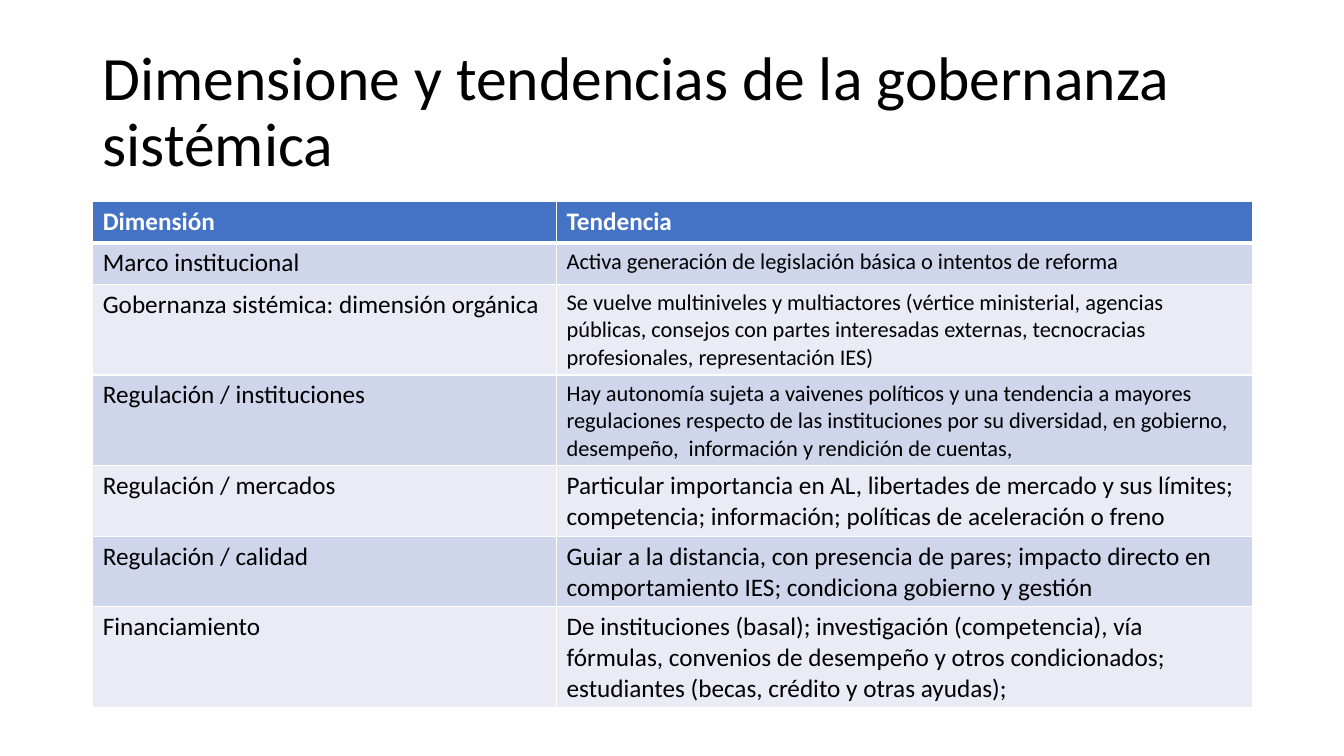
"""Build a slide with a table of dimensions and trends in systemic governance."""
import pptx
import pptx.dml.color
import pptx.enum.text
import pptx.oxml
import pptx.oxml.ns
import pptx.util

PX = 9144
THEME = {
    "font": "Calibri",
    "title_size": 44,
    "body_size": 18,
    "detail_size": 16,
    "text": "000000",
    "header_text": "FFFFFF",
    "header_fill": "4472C4",
    "bands": ["CFD5EA", "E9EBF5"],
    "border": "FFFFFF",
}
MARGIN, CONTENT_WIDTH = 92, 1150
ROW_HEIGHT = 41
COLUMN_WIDTHS = [460, 690]


def write(frame, text, size=THEME["body_size"], color=THEME["text"], bold=False, spacing=None):
    paragraph = frame.paragraphs[0]
    paragraph.line_spacing = spacing
    run = paragraph.add_run()
    run.text = text
    run.font.name = THEME["font"]
    run.font.size = pptx.util.Pt(size)
    run.font.bold = bold
    run.font.color.rgb = pptx.dml.color.RGBColor.from_string(color)


def add_borders(cell, top, bottom):
    properties = cell._tc.get_or_add_tcPr()
    widths = {"lnL": 1, "lnR": 1, "lnT": top, "lnB": bottom}
    for position, (side, points) in enumerate(widths.items()):
        line = pptx.oxml.parse_xml(
            f'<a:{side} {pptx.oxml.ns.nsdecls("a")} w="{pptx.util.Pt(points)}">'
            f'<a:solidFill><a:srgbClr val="{THEME["border"]}"/></a:solidFill></a:{side}>'
        )
        properties.insert(position, line)


big, small = THEME["body_size"], THEME["detail_size"]
governance = [
    ("Dimensión", "Tendencia", big),
    ("Marco institucional", "Activa generación de legislación básica o intentos de reforma", small),
    ("Gobernanza sistémica: dimensión orgánica",
     "Se vuelve multiniveles y multiactores (vértice ministerial, agencias públicas, "
     "consejos con partes interesadas externas, tecnocracias profesionales, "
     "representación IES)", small),
    ("Regulación / instituciones",
     "Hay autonomía sujeta a vaivenes políticos y una tendencia a mayores regulaciones "
     "respecto de las instituciones por su diversidad, en gobierno, desempeño,  "
     "información y rendición de cuentas,", small),
    ("Regulación / mercados",
     "Particular importancia en AL, libertades de mercado y sus límites; competencia; "
     "información; políticas de aceleración o freno", big),
    ("Regulación / calidad",
     "Guiar a la distancia, con presencia de pares; impacto directo en comportamiento "
     "IES; condiciona gobierno y gestión", big),
    ("Financiamiento",
     "De instituciones (basal); investigación (competencia), vía fórmulas, convenios de "
     "desempeño y otros condicionados; estudiantes (becas, crédito y otras ayudas);", big),
]

presentation = pptx.Presentation()
presentation.slide_width = 1333 * PX
presentation.slide_height = 750 * PX
slide = presentation.slides.add_slide(presentation.slide_layouts[6])

heading = slide.shapes.add_textbox(MARGIN * PX, 40 * PX, CONTENT_WIDTH * PX, 145 * PX).text_frame
heading.word_wrap = True
heading.vertical_anchor = pptx.enum.text.MSO_ANCHOR.MIDDLE
write(heading, "Dimensione y tendencias de la gobernanza sistémica",
      size=THEME["title_size"], spacing=0.9)

trends = slide.shapes.add_table(
    len(governance), len(COLUMN_WIDTHS), MARGIN * PX, 200 * PX,
    CONTENT_WIDTH * PX, len(governance) * ROW_HEIGHT * PX,
).table
for column, width in zip(trends.columns, COLUMN_WIDTHS):
    column.width = width * PX

for row, (dimension, trend, trend_size) in enumerate(governance):
    trends.rows[row].height = ROW_HEIGHT * PX
    is_header = row == 0
    fill = THEME["header_fill"] if is_header else THEME["bands"][(row - 1) % 2]
    color = THEME["header_text"] if is_header else THEME["text"]
    for column, (text, size) in enumerate([(dimension, big), (trend, trend_size)]):
        cell = trends.cell(row, column)
        cell.fill.solid()
        cell.fill.fore_color.rgb = pptx.dml.color.RGBColor.from_string(fill)
        add_borders(cell, top=3 if row == 1 else 1, bottom=3 if is_header else 1)
        write(cell.text_frame, text, size=size, color=color, bold=is_header)

presentation.save("out.pptx")
